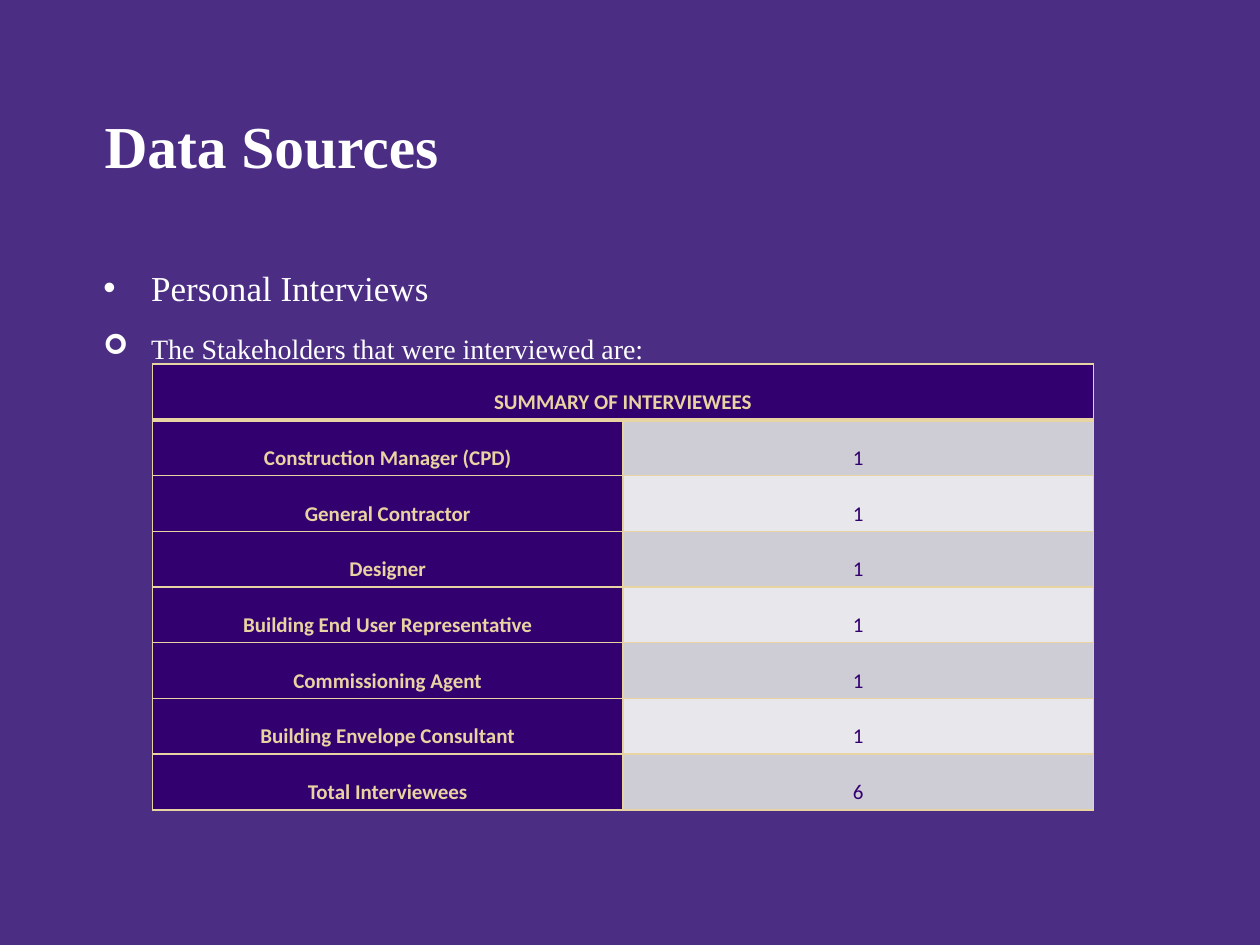
import pptx
import pptx.dml.color
import pptx.enum.text
import pptx.oxml
import pptx.oxml.ns
import pptx.util
from pptx.util import Inches

COLORS = {
    "background": "4B2E83",
    "white": "FFFFFF",
    "purple": "33006F",
    "gold": "E8D3A2",
    "dark_band": "CECCD5",
    "light_band": "E8E7EB",
}
SERIF, SANS = "Times New Roman", "Calibri"
HEADING = "SUMMARY OF INTERVIEWEES"
INTERVIEWEES = [
    ("Construction Manager (CPD)", 1),
    ("General Contractor", 1),
    ("Designer", 1),
    ("Building End User Representative", 1),
    ("Commissioning Agent", 1),
    ("Building Envelope Consultant", 1),
]
BULLETS = [
    ("•", "Arial", "Personal Interviews", 20),
    ("➢", "Wingdings", "The Stakeholders that were interviewed are:", 16),
]


def rgb(name):
    return pptx.dml.color.RGBColor.from_string(COLORS[name])


def place(shape, left, top, width, height):
    shape.left, shape.top = Inches(left), Inches(top)
    shape.width, shape.height = Inches(width), Inches(height)


def add_run(paragraph, text, font_name, size, color, bold=False):
    run = paragraph.add_run()
    run.text = text
    run.font.name = font_name
    run.font.size = pptx.util.Pt(size)
    run.font.bold = bold
    run.font.color.rgb = rgb(color)


def set_bullet(paragraph, symbol, symbol_font):
    """Give the paragraph a hanging bullet."""
    properties = paragraph._p.get_or_add_pPr()
    properties.set("marL", str(Inches(0.38)))
    properties.set("indent", str(-Inches(0.38)))
    namespace = pptx.oxml.ns.nsdecls("a")
    for tag, attribute, value in (("buFont", "typeface", symbol_font),
                                  ("buChar", "char", symbol)):
        properties.append(pptx.oxml.parse_xml(
            f'<a:{tag} {namespace} {attribute}="{value}"/>'))


def set_borders(cell, top=1, bottom=1):
    """Draw gold borders; widths are in points."""
    properties = cell._tc.get_or_add_tcPr()
    widths = {"lnL": 1, "lnR": 1, "lnT": top, "lnB": bottom}
    for position, (tag, width) in enumerate(widths.items()):
        properties.insert(position, pptx.oxml.parse_xml(
            f'<a:{tag} {pptx.oxml.ns.nsdecls("a")} w="{pptx.util.Pt(width)}">'
            f'<a:solidFill><a:srgbClr val="{COLORS["gold"]}"/></a:solidFill>'
            f'</a:{tag}>'))


def fill_cell(cell, text, fill, color, bold):
    cell.fill.solid()
    cell.fill.fore_color.rgb = rgb(fill)
    cell.margin_left = cell.margin_right = Inches(0.07)
    cell.margin_top = cell.margin_bottom = 0
    paragraph = cell.text_frame.paragraphs[0]
    paragraph.alignment = pptx.enum.text.PP_ALIGN.CENTER
    paragraph.line_spacing = 2.0
    add_run(paragraph, text, SANS, 12, color, bold)


def add_title(slide):
    title = slide.shapes.title
    place(title, 0.73, 0.41, 8.95, 1.08)
    title.text_frame.vertical_anchor = pptx.enum.text.MSO_ANCHOR.BOTTOM
    paragraph = title.text_frame.paragraphs[0]
    paragraph.alignment = pptx.enum.text.PP_ALIGN.LEFT
    paragraph.line_spacing = 0.9
    add_run(paragraph, "Data Sources", SERIF, 34, "white", bold=True)


def add_bullets(slide):
    body = slide.placeholders[1]
    place(body, 0.72, 1.9, 8.83, 4.39)
    frame = body.text_frame
    for index, (symbol, symbol_font, text, size) in enumerate(BULLETS):
        paragraph = frame.add_paragraph() if index else frame.paragraphs[0]
        set_bullet(paragraph, symbol, symbol_font)
        paragraph.line_spacing = 1.5
        paragraph.space_before = pptx.util.Pt(0.2 * size if index else 0)
        add_run(paragraph, text, SERIF, size, "white")


def add_interviewee_table(slide):
    total = sum(count for _, count in INTERVIEWEES)
    entries = INTERVIEWEES + [("Total Interviewees", total)]
    table = slide.shapes.add_table(
        len(entries) + 1, 2,
        Inches(1.21), Inches(2.89), Inches(7.47), Inches(3.54)).table

    heading = table.cell(0, 0)
    heading.merge(table.cell(0, 1))
    fill_cell(heading, HEADING, "purple", "gold", bold=True)
    for cell in table.rows[0].cells:
        set_borders(cell, bottom=3)

    for row, (role, count) in enumerate(entries, start=1):
        band = "dark_band" if row % 2 else "light_band"
        fill_cell(table.cell(row, 0), role, "purple", "gold", bold=True)
        fill_cell(table.cell(row, 1), str(count), band, "purple", bold=False)
        for cell in table.rows[row].cells:
            set_borders(cell, top=3 if row == 1 else 1)


def main():
    presentation = pptx.Presentation()
    presentation.slide_width = Inches(10)
    presentation.slide_height = Inches(7.5)
    slide = presentation.slides.add_slide(presentation.slide_layouts[1])
    slide.background.fill.solid()
    slide.background.fill.fore_color.rgb = rgb("background")
    add_title(slide)
    add_bullets(slide)
    add_interviewee_table(slide)
    presentation.save("out.pptx")


if __name__ == "__main__":
    main()
